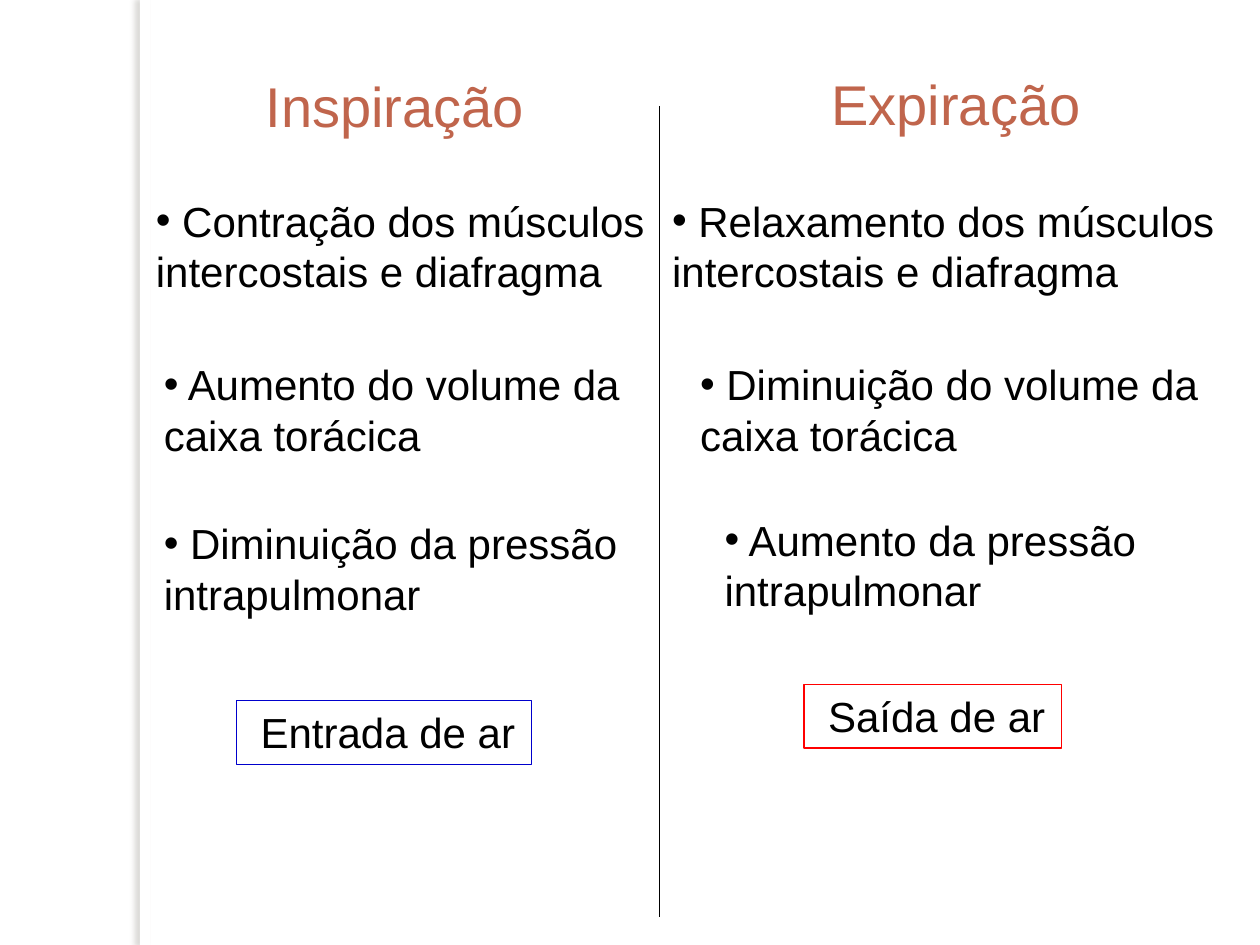
from lxml.etree import SubElement
from pptx import Presentation
from pptx.dml.color import RGBColor
from pptx.enum.shapes import MSO_CONNECTOR, MSO_SHAPE
from pptx.enum.text import MSO_ANCHOR, MSO_AUTO_SIZE, PP_ALIGN
from pptx.oxml.ns import qn
from pptx.util import Pt

FONT = "Arial"
BLACK = "000000"
RUST = "C0654C"
WHITE = "FFFFFF"


def color(code):
    return RGBColor.from_string(code)


def add_node(parent, tag, **attrs):
    return SubElement(parent, qn(tag), {key: str(val) for key, val in attrs.items()})


def add_text(slide, box, lines, size=24, ink=BLACK, bullet=False, wrap=False):
    shape = slide.shapes.add_textbox(*map(Pt, box))
    frame = shape.text_frame
    frame.word_wrap = wrap
    frame.auto_size = MSO_AUTO_SIZE.SHAPE_TO_FIT_TEXT
    frame.vertical_anchor = MSO_ANCHOR.TOP
    for row, line in enumerate(lines):
        para = frame.paragraphs[0] if row == 0 else frame.add_paragraph()
        para.alignment = PP_ALIGN.LEFT
        if bullet and row == 0:
            props = para._p.get_or_add_pPr()
            add_node(props, "a:buFont", typeface=FONT)
            add_node(props, "a:buChar", char="•")
        run = para.add_run()
        run.text = line
        run.font.name = FONT
        run.font.size = Pt(size)
        run.font.color.rgb = color(ink)
    return shape


def add_edge(slide, box):
    strip = slide.shapes.add_shape(MSO_SHAPE.RECTANGLE, *map(Pt, box))
    strip.shadow.inherit = False
    strip.fill.solid()
    strip.fill.fore_color.rgb = color(WHITE)
    strip.line.fill.background()
    effects = strip._element.spPr.find(qn("a:effectLst"))
    shade = add_node(effects, "a:outerShdw", blurRad=Pt(3), dist=Pt(3),
                     dir=180 * 60000, algn="tl", rotWithShape=0)
    tint = add_node(shade, "a:srgbClr", val="736F63")
    add_node(tint, "a:alpha", val=25000)


def add_split(slide, left, top, bottom):
    line = slide.shapes.add_connector(
        MSO_CONNECTOR.STRAIGHT, Pt(left), Pt(top), Pt(left), Pt(bottom))
    line.line.color.rgb = color(BLACK)
    line.line.width = Pt(0.75)
    add_node(line._element.spPr, "a:effectLst")


def add_phase(slide, left, title, points, result):
    name, (dx, top, width) = title
    add_text(slide, (left + dx, top, width, 46), [name], 32, RUST)
    for row, (lines, (dx, top, width)) in enumerate(points):
        add_text(slide, (left + dx, top, width, 65.5), lines,
                 bullet=True, wrap=row == 0)
    label, edge, (dx, top, width) = result
    frame = add_text(slide, (left + dx, top, width, 36.5), [label])
    frame.line.color.rgb = color(edge)
    frame.line.width = Pt(0.75)


def main():
    deck = Presentation()
    deck.slide_width, deck.slide_height = Pt(720), Pt(540)
    slide = deck.slides.add_slide(deck.slide_layouts[6])
    add_edge(slide, (80, 0, 6, 540))
    add_split(slide, 377, 60.5, 524)
    add_phase(
        slide, 82,
        ("Inspiração", (62.7, 37.5, 163.5)),
        [
            ([" Contração dos músculos", "intercostais e diafragma"], (0, 108, 294.5)),
            ([" Aumento do volume da", "caixa torácica"], (4.5, 201.5, 278)),
            ([" Diminuição da pressão", "intrapulmonar"], (4.5, 292.3, 276.5)),
        ],
        (" Entrada de ar", "0000CC", (53.2, 400.3, 168.5)))
    add_phase(
        slide, 377,
        ("Expiração", (91, 36, 158.5)),
        [
            ([" Relaxamento dos músculos", "intercostais e diafragma"], (0, 108, 335)),
            ([" Diminuição do volume da", "caixa torácica"], (16, 201.5, 302.5)),
            ([" Aumento da pressão", "intrapulmonar"], (30, 290.2, 252)),
        ],
        (" Saída de ar", "FF0000", (82.5, 391, 147)))
    deck.save("out.pptx")


if __name__ == "__main__":
    main()
